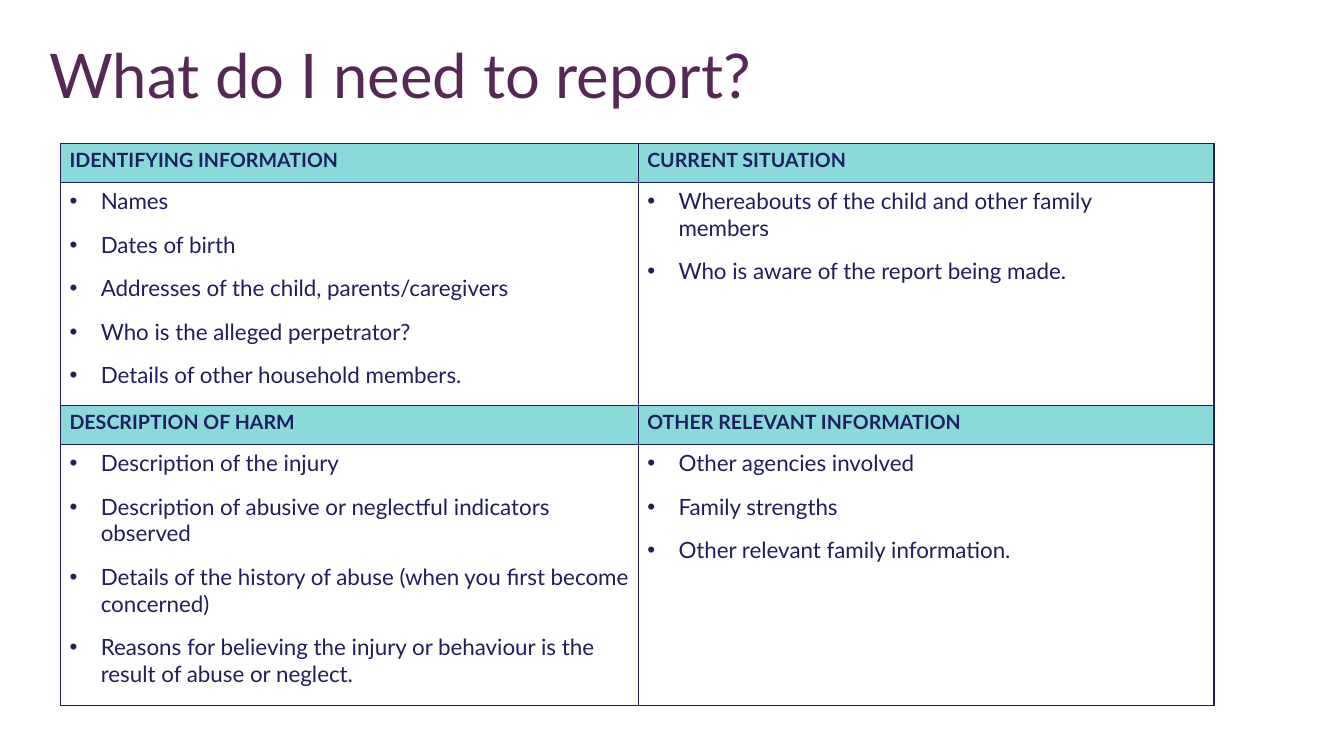
"""Build the slide that lists what to report."""
from lxml.etree import SubElement
from pptx import Presentation
from pptx.dml.color import RGBColor as Rgb
from pptx.enum.text import MSO_ANCHOR as Anchor
from pptx.oxml import parse_xml
from pptx.oxml.ns import nsdecls, qn
from pptx.util import Inches, Pt

TITLE = "What do I need to report?"
TOPICS = [
    [
        ("IDENTIFYING INFORMATION", [
            "Names",
            "Dates of birth",
            "Addresses of the child, parents/caregivers",
            "Who is the alleged perpetrator?",
            "Details of other household members.",
        ]),
        ("CURRENT SITUATION", [
            "Whereabouts of the child and other family\vmembers",
            "Who is aware of the report being made.",
        ]),
    ],
    [
        ("DESCRIPTION OF HARM", [
            "Description of the injury",
            "Description of abusive or neglectful indicators observed",
            "Details of the history of abuse (when you first become concerned)",
            "Reasons for believing the injury or behaviour is the result of abuse or neglect.",
        ]),
        ("OTHER RELEVANT INFORMATION", [
            "Other agencies involved",
            "Family strengths",
            "Other relevant family information.",
        ]),
    ],
]
COLORS = {"title": "552855", "ink": "1F1F5F", "head": "8ADADA", "body": "FFFFFF"}
FONTS = {
    "title": {"name": "Lato", "size": Pt(44), "bold": False},
    "head": {"name": "Lato", "size": Pt(14), "bold": True},
    "body": {"name": "Lato", "size": Pt(16), "bold": False},
}
MARGINS = {"margin_left": Inches(0.09), "margin_right": Inches(0.09),
           "margin_top": Inches(0.05), "margin_bottom": Inches(0.05)}
COLS = [5.73, 5.71]
ROWS = [0.39, 2.21, 0.39, 2.59]


def set_all(item, values):
    """Set each named attribute on an item."""
    for key, value in values.items():
        setattr(item, key, value)


def style(para, kind, color):
    """Give every run of a paragraph its font."""
    for run in para.runs:
        set_all(run.font, FONTS[kind])
        run.font.color.rgb = Rgb.from_string(COLORS[color])


def add_bullet(para):
    """Hang a round bullet on a paragraph."""
    props = para._p.get_or_add_pPr()
    props.set("marL", str(Inches(0.31)))
    props.set("indent", str(-Inches(0.31)))
    SubElement(props, qn("a:buFont")).set("typeface", "Arial")
    SubElement(props, qn("a:buChar")).set("char", "•")


def add_edges(cell):
    """Draw a thin line on all four sides of a cell."""
    props = cell._tc.get_or_add_tcPr()
    for spot, side in enumerate("LRTB"):
        props.insert(spot, parse_xml(
            f'<a:ln{side} {nsdecls("a")} w="{Pt(1)}"><a:solidFill>'
            f'<a:srgbClr val="{COLORS["ink"]}"/></a:solidFill></a:ln{side}>'))


def fill_cell(cell, lines, kind):
    """Write lines into a cell of the given kind."""
    set_all(cell, MARGINS)
    cell.fill.solid()
    cell.fill.fore_color.rgb = Rgb.from_string(COLORS[kind])
    add_edges(cell)
    frame = cell.text_frame
    for num, line in enumerate(lines):
        para = frame.add_paragraph() if num else frame.paragraphs[0]
        para.text = line
        para.space_before = Pt(6 if num else 0)
        para.space_after = Pt(6)
        if kind == "body":
            add_bullet(para)
        style(para, kind, "ink")


def add_title(slide):
    """Place the slide title."""
    box = slide.shapes.add_textbox(Inches(0.39), Inches(0.4), Inches(11.44), Inches(0.79))
    frame = box.text_frame
    set_all(frame, {"word_wrap": True, "vertical_anchor": Anchor.MIDDLE})
    para = frame.paragraphs[0]
    set_all(para, {"text": TITLE, "line_spacing": Pt(43.7), "space_after": Pt(14.6)})
    style(para, "title", "title")


def add_grid(slide):
    """Place the table of topics."""
    table = slide.shapes.add_table(
        len(ROWS), len(COLS), Inches(0.6), Inches(1.42),
        Inches(sum(COLS)), Inches(sum(ROWS))).table
    set_all(table, {"first_row": False, "horz_banding": False})
    for col, width in zip(table.columns, COLS):
        col.width = Inches(width)
    for row, height in zip(table.rows, ROWS):
        row.height = Inches(height)
    for band, pair in enumerate(TOPICS):
        for col, (head, items) in enumerate(pair):
            fill_cell(table.cell(2 * band, col), [head], "head")
            fill_cell(table.cell(2 * band + 1, col), items, "body")


def main():
    """Make and save the deck."""
    deck = Presentation()
    set_all(deck, {"slide_width": Inches(13.33), "slide_height": Inches(7.5)})
    slide = deck.slides.add_slide(deck.slide_layouts[6])
    add_title(slide)
    add_grid(slide)
    deck.save("out.pptx")


if __name__ == "__main__":
    main()
